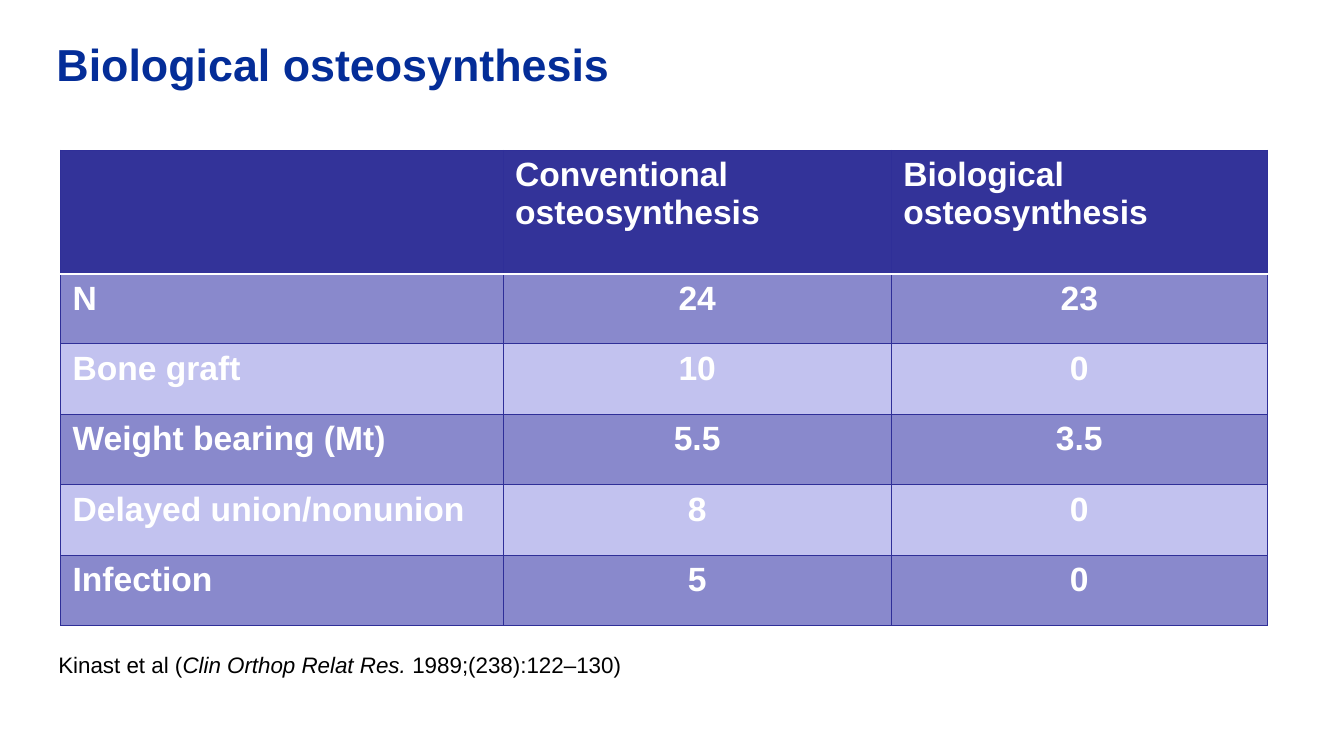
"""Build the slide comparing conventional and biological osteosynthesis."""
from lxml.etree import SubElement
from pptx import Presentation
from pptx.dml.color import RGBColor
from pptx.enum.text import MSO_ANCHOR as Anchor, PP_ALIGN as Align
from pptx.oxml.ns import qn
from pptx.util import Inches, Pt

ROWS = [
    ("", "Conventional osteosynthesis", "Biological osteosynthesis"),
    ("N", "24", "23"),
    ("Bone graft", "10", "0"),
    ("Weight bearing (Mt)", "5.5", "3.5"),
    ("Delayed union/nonunion", "8", "0"),
    ("Infection", "5", "0"),
]
COLUMN_WIDTHS = (4.39, 3.85, 3.73)
ROW_HEIGHTS = (1.23, 0.69, 0.7, 0.7, 0.7, 0.7)
HEADER_FILL, BAND_FILLS = "333399", ("C2C2EF", "8989CC")
GRID_LINE, HEADER_RULE = ("2F2F98", 0.75), ("FFFFFF", 2)
TITLE_FONT = {"name": "Arial", "size": Pt(32), "bold": True}
CELL_FONT = {"name": "Arial", "size": Pt(24), "bold": True}
SOURCE_FONT = {"name": "Arial", "size": Pt(16)}


def set_attributes(target, values):
    for name, value in values.items():
        setattr(target, name, value)


def set_color(color_format, color):
    color_format.rgb = RGBColor.from_string(color)


def add_run(paragraph, text, font, color):
    run = paragraph.add_run()
    run.text = text
    set_attributes(run.font, font)
    set_color(run.font.color, color)


def add_title(slide, text):
    title = slide.shapes.title
    set_attributes(title, {"left": Inches(0.56), "top": Inches(0.42),
                           "width": Inches(11.73), "height": Inches(0.82)})
    frame = title.text_frame
    set_attributes(frame, {"margin_left": 0, "margin_right": 0, "margin_top": 0,
                           "margin_bottom": 0, "vertical_anchor": Anchor.TOP})
    paragraph = frame.paragraphs[0]
    set_attributes(paragraph, {"alignment": Align.LEFT, "line_spacing": 0.9})
    add_run(paragraph, text, TITLE_FONT, "042D98")


def add_border(cell, side, color, width):
    properties = cell._tc.get_or_add_tcPr()
    line = SubElement(properties, qn(f"a:ln{side}"), w=str(Pt(width)))
    fill = SubElement(line, qn("a:solidFill"))
    SubElement(fill, qn("a:srgbClr"), val=color)


def format_cell(cell, text, row, column):
    rules = {"T": 1, "B": 0}
    for side in "LRTB":
        add_border(cell, side, *(HEADER_RULE if rules.get(side) == row else GRID_LINE))
    cell.fill.solid()
    set_color(cell.fill.fore_color, BAND_FILLS[row % 2] if row else HEADER_FILL)
    set_attributes(cell, {"margin_left": Inches(0.12), "margin_right": Inches(0.12),
                          "margin_top": Inches(0.06), "margin_bottom": Inches(0.06)})
    if text:
        paragraph = cell.text_frame.paragraphs[0]
        paragraph.alignment = Align.CENTER if row and column else Align.LEFT
        add_run(paragraph, text, CELL_FONT, "FFFFFF")


def add_results_table(slide):
    table = slide.shapes.add_table(
        len(ROWS), len(COLUMN_WIDTHS), Inches(0.6), Inches(1.49),
        Inches(sum(COLUMN_WIDTHS)), Inches(sum(ROW_HEIGHTS))).table
    for column, width in zip(table.columns, COLUMN_WIDTHS):
        column.width = Inches(width)
    for row, height in zip(table.rows, ROW_HEIGHTS):
        row.height = Inches(height)
    for row, texts in enumerate(ROWS):
        for column, text in enumerate(texts):
            format_cell(table.cell(row, column), text, row, column)


def add_source(slide, parts):
    box = slide.shapes.add_textbox(Inches(0.48), Inches(6.27), Inches(8.71), Inches(0.65))
    set_attributes(box.text_frame, {"word_wrap": True, "vertical_anchor": Anchor.MIDDLE})
    for text, italic in parts:
        add_run(box.text_frame.paragraphs[0], text, SOURCE_FONT | {"italic": italic}, "000000")


def main():
    presentation = Presentation()
    set_attributes(presentation, {"slide_width": Inches(13.33), "slide_height": Inches(7.5)})
    slide = presentation.slides.add_slide(presentation.slide_layouts.get_by_name("Title Only"))
    add_title(slide, "Biological osteosynthesis")
    add_results_table(slide)
    add_source(slide, [("Kinast et al (", False), ("Clin Orthop Relat Res. ", True),
                       ("1989;(238):122–130)", False)])
    presentation.save("out.pptx")


if __name__ == "__main__":
    main()
